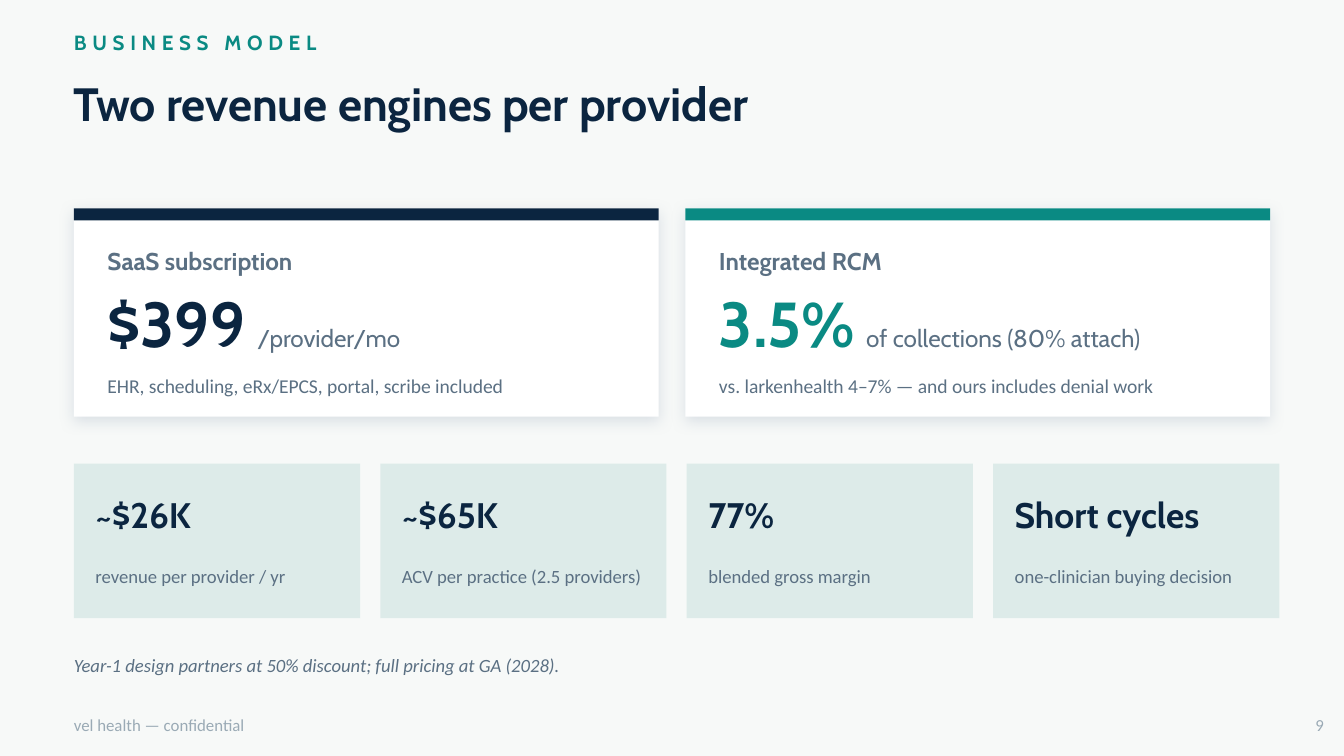
from lxml.etree import SubElement
from pptx import Presentation
from pptx.dml.color import RGBColor
from pptx.enum.shapes import MSO_SHAPE
from pptx.enum.text import MSO_ANCHOR, PP_ALIGN
from pptx.oxml import parse_xml
from pptx.oxml.ns import nsdecls, qn
from pptx.util import Pt

THEME = {
    "colors": {
        "background": "F7F9F8", "navy": "0B2540", "teal": "0A8A83", "slate": "5B7083",
        "mist": "DDEBE9", "white": "FFFFFF", "muted": "9AAAB5", "shadow": "94A3B8",
    },
    "styles": {
        "eyebrow": {"name": "Cabin", "size": Pt(11), "bold": True},
        "title": {"name": "Cabin", "size": Pt(25), "bold": True},
        "card_label": {"name": "Cabin", "size": Pt(13), "bold": True},
        "price": {"name": "Cabin", "size": Pt(34), "bold": True},
        "gap": {"name": "Cabin", "size": Pt(26), "bold": False},
        "unit": {"name": "Cabin", "size": Pt(13), "bold": False},
        "card_note": {"name": "Calibri", "size": Pt(10.5)},
        "metric": {"name": "Cabin", "size": Pt(19), "bold": True},
        "caption": {"name": "Calibri", "size": Pt(10)},
        "footnote": {"name": "Calibri", "size": Pt(10), "italic": True},
        "footer": {"name": "Calibri", "size": Pt(9)},
    },
}
COLORS = {name: RGBColor.from_string(value) for name, value in THEME["colors"].items()}

presentation = Presentation()
presentation.slide_width = Pt(720)
presentation.slide_height = Pt(405)
slide = presentation.slides.add_slide(presentation.slide_layouts[6])
slide.background.fill.solid()
slide.background.fill.fore_color.rgb = COLORS["background"]


def add_text(left, top, width, height, runs, anchor=MSO_ANCHOR.MIDDLE, align=PP_ALIGN.LEFT):
    box = slide.shapes.add_textbox(Pt(left), Pt(top), Pt(width), Pt(height))
    frame_format = {
        "word_wrap": True, "vertical_anchor": anchor,
        "margin_left": 0, "margin_right": 0, "margin_top": 0, "margin_bottom": 0,
    }
    for attribute, value in frame_format.items():
        setattr(box.text_frame, attribute, value)
    paragraph = box.text_frame.paragraphs[0]
    paragraph.alignment = align
    for text, style, color in runs:
        run = paragraph.add_run()
        run.text = text
        for attribute, value in THEME["styles"][style].items():
            setattr(run.font, attribute, value)
        run.font.color.rgb = COLORS[color]
    return paragraph


def add_rectangle(left, top, width, height, color):
    shape = slide.shapes.add_shape(MSO_SHAPE.RECTANGLE, Pt(left), Pt(top), Pt(width), Pt(height))
    shape.shadow.inherit = False
    shape.fill.solid()
    shape.fill.fore_color.rgb = COLORS[color]
    shape.line.fill.background()
    return shape


MARGIN = 39.6

eyebrow = add_text(MARGIN, 15.84, 648, 20.16, [("BUSINESS MODEL", "eyebrow", "teal")], MSO_ANCHOR.TOP)
eyebrow.runs[0].font._element.set("spc", "300")
add_text(MARGIN, 40.32, 648, 57.6, [("Two revenue engines per provider", "title", "navy")], MSO_ANCHOR.TOP)

CARD_TOP, CARD_WIDTH, CARD_HEIGHT, CARD_GAP = 111.6, 313.2, 111.6, 14.4
cards = [
    ("navy", "SaaS subscription", "$399", "/provider/mo",
     "EHR, scheduling, eRx/EPCS, portal, scribe included"),
    ("teal", "Integrated RCM", "3.5%", "of collections (80% attach)",
     "vs. larkenhealth 4–7% — and ours includes denial work"),
]
for index, (accent, label, price, unit, note) in enumerate(cards):
    left = MARGIN + index * (CARD_WIDTH + CARD_GAP)
    card = add_rectangle(left, CARD_TOP, CARD_WIDTH, CARD_HEIGHT, "white")
    effects = card._element.spPr.find(qn("a:effectLst"))
    shadow = parse_xml(
        f'<a:outerShdw {nsdecls("a")} blurRad="{Pt(8)}" dist="{Pt(2)}" dir="5400000" '
        'algn="ctr" rotWithShape="0"/>'
    )
    effects.append(shadow)
    shadow_color = SubElement(shadow, qn("a:srgbClr"), val=THEME["colors"]["shadow"])
    SubElement(shadow_color, qn("a:alpha"), val="30000")
    add_rectangle(left, CARD_TOP, CARD_WIDTH, 6.48, accent)
    price_runs = [(price, "price", accent), (" ", "gap", "slate"), (unit, "unit", "slate")]
    rows = [
        (128.16, 23.04, [(label, "card_label", "slate")]),
        (151.2, 43.2, price_runs),
        (195.84, 21.6, [(note, "card_note", "slate")]),
    ]
    for top, height, runs in rows:
        add_text(left + 18, top, 280.8, height, runs)

TILE_TOP, TILE_WIDTH, TILE_HEIGHT, TILE_GAP = 248.4, 153.36, 82.8, 10.8
tiles = [
    ("~$26K", "revenue per provider / yr"),
    ("~$65K", "ACV per practice (2.5 providers)"),
    ("77%", "blended gross margin"),
    ("Short cycles", "one-clinician buying decision"),
]
for index, (metric, caption) in enumerate(tiles):
    left = MARGIN + index * (TILE_WIDTH + TILE_GAP)
    add_rectangle(left, TILE_TOP, TILE_WIDTH, TILE_HEIGHT, "mist")
    add_text(left + 11.52, 259.2, 133.2, 32.4, [(metric, "metric", "navy")])
    add_text(left + 11.52, 292.32, 133.2, 32.4, [(caption, "caption", "slate")])

footnote = "Year-1 design partners at 50% discount; full pricing at GA (2028)."
add_text(MARGIN, 345.6, 640.8, 21.6, [(footnote, "footnote", "slate")])
add_text(680.4, 379.44, 28.8, 18, [("9", "footer", "muted")], align=PP_ALIGN.RIGHT)
add_text(MARGIN, 379.44, 216, 18, [("vel health — confidential", "footer", "muted")])

presentation.save("out.pptx")
